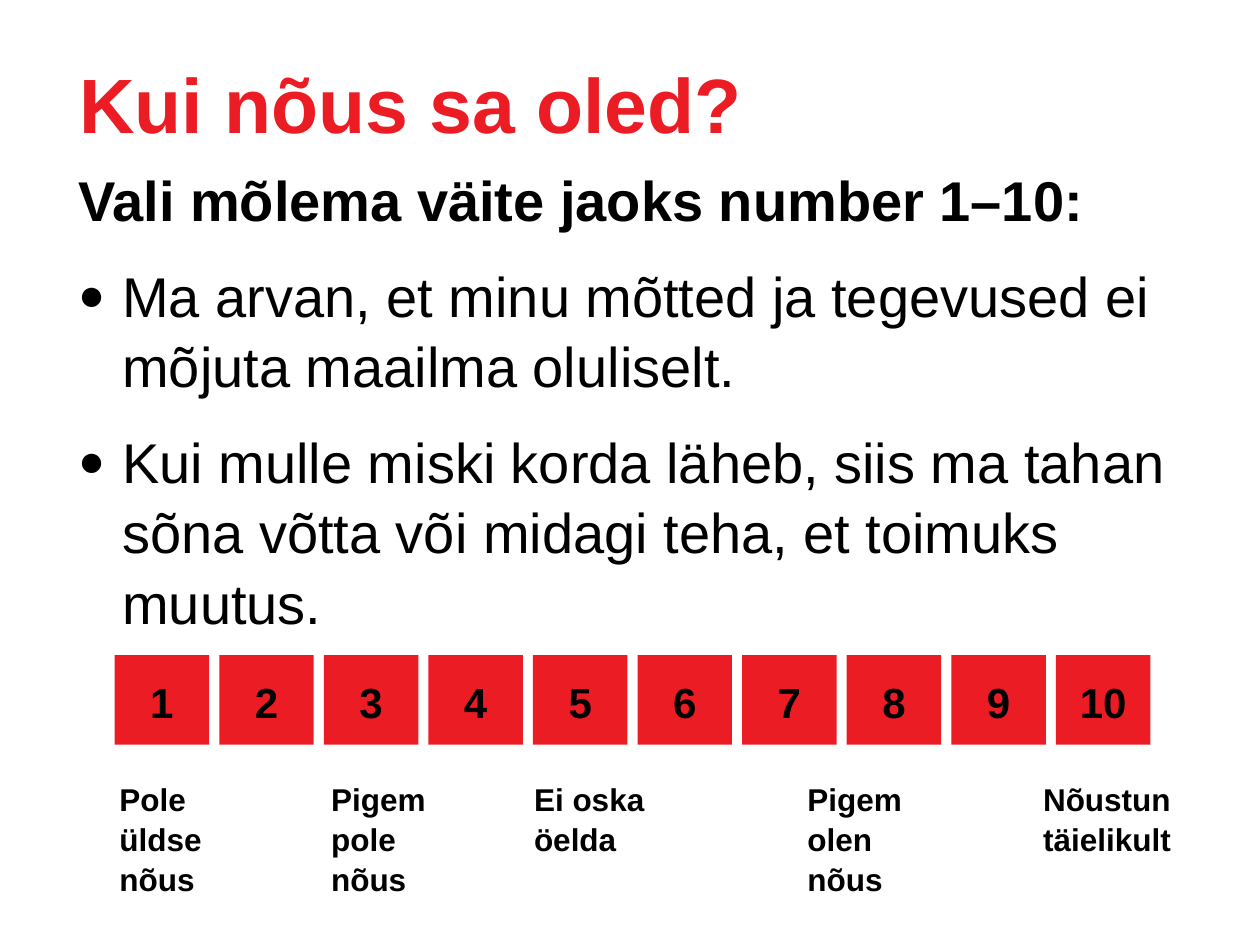
"""Build the agreement-scale slide."""
from dataclasses import dataclass

import pptx
import pptx.dml.color
import pptx.enum.shapes
import pptx.enum.text
import pptx.oxml
import pptx.oxml.ns
import pptx.util

Inches = pptx.util.Inches
Pt = pptx.util.Pt
Align = pptx.enum.text.PP_ALIGN
Anchor = pptx.enum.text.MSO_ANCHOR
AutoSize = pptx.enum.text.MSO_AUTO_SIZE


@dataclass(frozen=True)
class Theme:
    """Colours, font and type sizes of the slide."""
    red: str = "EB1C24"
    black: str = "000000"
    font: str = "Arial"
    title: int = 44
    body: int = 32
    number: int = 24
    label: int = 18
    line_spacing: float = 1.05


THEME = Theme()
QUESTION = "Kui nõus sa oled?"
INSTRUCTION = "Vali mõlema väite jaoks number 1–10:"
STATEMENTS = [
    "Ma arvan, et minu mõtted ja tegevused ei mõjuta maailma oluliselt.",
    "Kui mulle miski korda läheb, siis ma tahan sõna võtta või midagi teha, "
    "et toimuks muutus.",
]
ANSWERS = [
    (0.85, 0.86, ["Pole", "üldse", "nõus"]),
    (2.53, 0.96, ["Pigem", "pole", "nõus"]),
    (4.14, 1.08, ["Ei oska", "öelda"]),
    (6.31, 0.96, ["Pigem", "olen", "nõus"]),
    (8.18, 1.22, ["Nõustun", "täielikult"]),
]


def rgb(code):
    """Return the colour for a hex code."""
    return pptx.dml.color.RGBColor.from_string(code)


def write(paragraph, text, *, size, color=THEME.black, bold=True,
          align=Align.LEFT, spacing=THEME.line_spacing, after=0):
    """Fill a paragraph with formatted text."""
    paragraph.alignment = align
    paragraph.line_spacing = spacing
    paragraph.space_before = Pt(0)
    paragraph.space_after = Pt(after)
    run = paragraph.add_run()
    run.text = text
    run.font.name = THEME.font
    run.font.size = Pt(size)
    run.font.bold = bold
    run.font.color.rgb = rgb(color)


def write_lines(frame, lines, **style):
    """Write each line as a paragraph and return the paragraphs."""
    for _ in lines[1:]:
        frame.add_paragraph()
    for paragraph, line in zip(frame.paragraphs, lines):
        write(paragraph, line, **style)
    return frame.paragraphs


def set_frame(frame, *, anchor, margins=(0, 0), wrap=True, fit=AutoSize.NONE):
    """Set the anchor, margins, wrapping and fit of a text frame."""
    frame.vertical_anchor = anchor
    frame.margin_left = frame.margin_right = Inches(margins[0])
    frame.margin_top = frame.margin_bottom = Inches(margins[1])
    frame.word_wrap = wrap
    frame.auto_size = fit


def place(shape, left, top, width, height):
    """Move and size a placeholder."""
    shape.left, shape.top = Inches(left), Inches(top)
    shape.width, shape.height = Inches(width), Inches(height)


def set_bullet(paragraph, char=None):
    """Give a paragraph the hanging indent and an optional bullet."""
    properties = paragraph._p.get_or_add_pPr()
    properties.set("marL", str(Inches(0.47)))
    properties.set("indent", str(Inches(-0.35)))
    if char:
        marks = [("a:buSzPct", "val", "80000"), ("a:buChar", "char", char)]
    else:
        marks = [("a:buNone", None, None)]
    for tag, key, value in marks:
        mark = pptx.oxml.xmlchemy.OxmlElement(tag)
        if key:
            mark.set(key, value)
        properties.append(mark)


def add_question(slide):
    """Fill the title placeholder."""
    question = slide.shapes.title
    place(question, 0.63, 0.01, 8.5, 1.61)
    set_frame(question.text_frame, anchor=Anchor.MIDDLE)
    write_lines(question.text_frame, [QUESTION], size=THEME.title,
                color=THEME.red, spacing=1.0)


def add_statements(slide):
    """Fill the body placeholder with the instruction and statements."""
    body = slide.placeholders[1]
    place(body, 0.5, 1.29, 9, 4.95)
    frame = body.text_frame
    set_frame(frame, anchor=Anchor.TOP)
    write(frame.paragraphs[0], INSTRUCTION, size=THEME.body, after=14.2)
    set_bullet(frame.paragraphs[0])
    for statement in STATEMENTS:
        paragraph = frame.add_paragraph()
        write(paragraph, statement, size=THEME.body, bold=False, after=14.2)
        set_bullet(paragraph, "●")


def add_answer(slide, left, width, lines):
    """Add an answer label below the scale."""
    label = slide.shapes.add_textbox(Inches(left), Inches(6.13), Inches(width),
                                     Inches(0.1 + 0.3 * len(lines)))
    set_frame(label.text_frame, anchor=Anchor.TOP, margins=(0.1, 0.05),
              wrap=False, fit=AutoSize.SHAPE_TO_FIT_TEXT)
    write_lines(label.text_frame, lines, size=THEME.label)


def add_step(slide, number):
    """Add one numbered square of the scale."""
    step = slide.shapes.add_shape(
        pptx.enum.shapes.MSO_SHAPE.RECTANGLE,
        Inches(0.91 + 0.83 * (number - 1)), Inches(5.2), Inches(0.75), Inches(0.71))
    step.shadow.inherit = False
    step.fill.solid()
    step.fill.fore_color.rgb = rgb(THEME.red)
    step.line.fill.background()
    set_frame(step.text_frame, anchor=Anchor.MIDDLE)
    write_lines(step.text_frame, [str(number)], size=THEME.number,
                align=Align.CENTER)


def main():
    """Build and save the slide."""
    deck = pptx.Presentation()
    deck.slide_width, deck.slide_height = Inches(10), Inches(7.5)
    slide = deck.slides.add_slide(deck.slide_layouts[1])
    add_question(slide)
    add_statements(slide)
    for left, width, lines in ANSWERS:
        add_answer(slide, left, width, lines)
    for number in range(1, 11):
        add_step(slide, number)
    deck.save("out.pptx")


if __name__ == "__main__":
    main()
